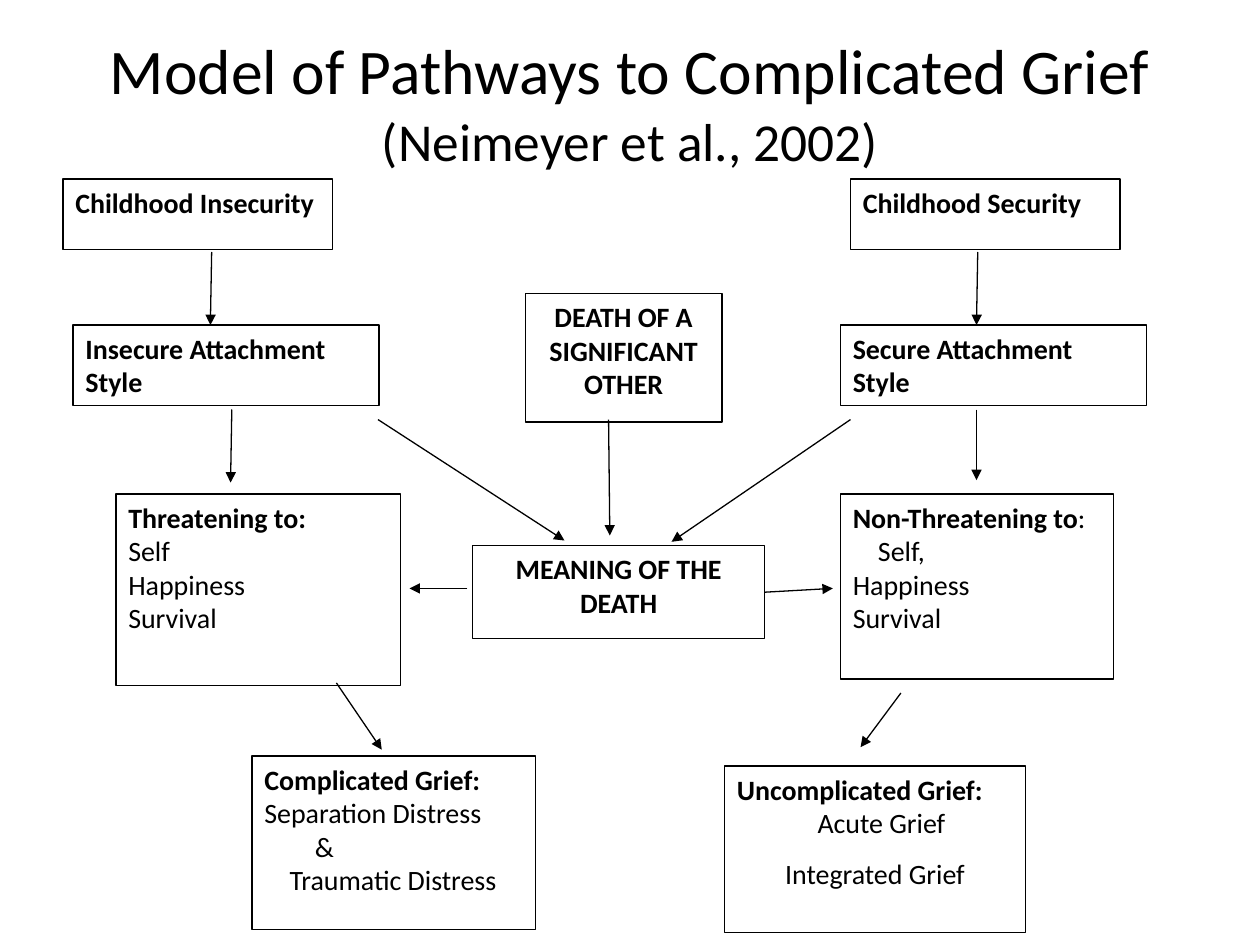
"""Builds a slide with a flow model of pathways to complicated grief."""
from lxml.etree import SubElement
from pptx import Presentation
from pptx.dml.color import RGBColor
from pptx.enum.shapes import MSO_CONNECTOR, MSO_SHAPE
from pptx.enum.text import MSO_ANCHOR, PP_ALIGN
from pptx.oxml.ns import qn
from pptx.util import Inches, Pt


def color(value):
    return RGBColor.from_string(value)


class Diagram:
    font, ink, paper = "Calibri", "000000", "FFFFFF"
    text_size, line_width = 16, 0.75

    def __init__(self, page):
        self.page = page

    def style(self, para, size, bold=None):
        para.font.name = self.font
        para.font.size = Pt(size)
        para.font.bold = bold
        para.font.color.rgb = color(self.ink)

    def title(self, left, top, width, height, lines):
        box = self.page.shapes.add_textbox(*map(Inches, (left, top, width, height)))
        frame = box.text_frame
        frame.word_wrap = True
        frame.margin_top = Inches(0.08)
        for index, (text, size) in enumerate(lines):
            para = frame.paragraphs[0] if index == 0 else frame.add_paragraph()
            para.text = text
            para.alignment = PP_ALIGN.CENTER
            self.style(para, size)

    def box(self, left, top, width, height, heading, details=(), align=PP_ALIGN.LEFT, tail=""):
        box = self.page.shapes.add_shape(
            MSO_SHAPE.RECTANGLE, *map(Inches, (left, top, width, height)))
        box.shadow.inherit = False
        box.fill.solid()
        box.fill.fore_color.rgb = color(self.paper)
        box.line.color.rgb = color(self.ink)
        box.line.width = Pt(self.line_width)
        frame = box.text_frame
        frame.word_wrap = True
        frame.vertical_anchor = MSO_ANCHOR.TOP
        para = frame.paragraphs[0]
        para.text = heading
        para.alignment = align
        self.style(para, self.text_size, True)
        if tail:
            span = para.add_run()
            span.text = tail
            span.font.bold = False
        for text, indent, gap, alignment in details:
            para = frame.add_paragraph()
            para.text = text
            para.alignment = alignment
            para.space_before = Pt(gap)
            para._p.get_or_add_pPr().set("marL", str(Inches(indent)))
            self.style(para, self.text_size, False)
        return box

    def arrow(self, start, end, source=None, side=3):
        line = self.page.shapes.add_connector(
            MSO_CONNECTOR.STRAIGHT, *map(Inches, (*start, *end)))
        line.line.color.rgb = color(self.ink)
        line.line.width = Pt(self.line_width)
        SubElement(line.line._get_or_add_ln(), qn("a:tailEnd"), type="triangle")
        SubElement(line._element.spPr, qn("a:effectLst"))
        if source:
            line.begin_connect(source, side)


def detail(text, indent=0, gap=0, align=PP_ALIGN.LEFT):
    return text, indent, gap, align


def main():
    deck = Presentation()
    deck.slide_width, deck.slide_height = Inches(10), Inches(7.5)
    diagram = Diagram(deck.slides.add_slide(deck.slide_layouts[6]))

    diagram.title(0.5, 0.17, 9, 1, [
        ("Model of Pathways to Complicated Grief", 36.3),
        ("(Neimeyer et al., 2002)", 30.5)])

    for left, name in ((0.5, "Childhood Insecurity"), (6.75, "Childhood Security")):
        diagram.box(left, 1.42, 2.14, 0.56, name)
    for left, name in ((0.58, "Insecure Attachment Style"), (6.67, "Secure Attachment Style")):
        diagram.box(left, 2.58, 2.43, 0.64, name)

    diagram.box(4.17, 2.33, 1.56, 1.02, "DEATH OF A SIGNIFICANT OTHER", align=PP_ALIGN.CENTER)
    meaning = diagram.box(3.75, 4.33, 2.32, 0.74, "MEANING OF THE DEATH", align=PP_ALIGN.CENTER)
    diagram.box(0.92, 3.92, 2.26, 1.52, "Threatening to:",
                [detail("Self"), detail("Happiness"), detail("Survival")])
    diagram.box(6.67, 3.92, 2.17, 1.47, "Non-Threatening to",
                [detail("Self,", 0.2), detail("Happiness"), detail("Survival")], tail=":")
    diagram.box(2, 6, 2.25, 1.38, "Complicated Grief:",
                [detail("Separation Distress"), detail("&", 0.4),
                 detail("Traumatic Distress", 0.2)])
    diagram.box(5.75, 6.08, 2.39, 1.32, "Uncomplicated Grief:",
                [detail("Acute Grief", 0.64),
                 detail("Integrated Grief", gap=10, align=PP_ALIGN.CENTER)])

    for start, end in (
            ((1.68, 2), (1.67, 2.58)), ((7.76, 2), (7.75, 2.58)),
            ((1.84, 3.25), (1.83, 3.83)), ((7.75, 3.25), (7.75, 3.81)),
            ((3, 3.33), (4.48, 4.29)), ((6.75, 3.33), (5.33, 4.3)),
            ((4.83, 3.33), (4.84, 4.25)), ((3.71, 4.67), (3.25, 4.67)),
            ((2.67, 5.42), (3.03, 5.95)), ((7.15, 5.5), (6.83, 5.93))):
        diagram.arrow(start, end)
    diagram.arrow((6.07, 4.7), (6.61, 4.67), source=meaning)

    deck.save("out.pptx")


if __name__ == "__main__":
    main()
